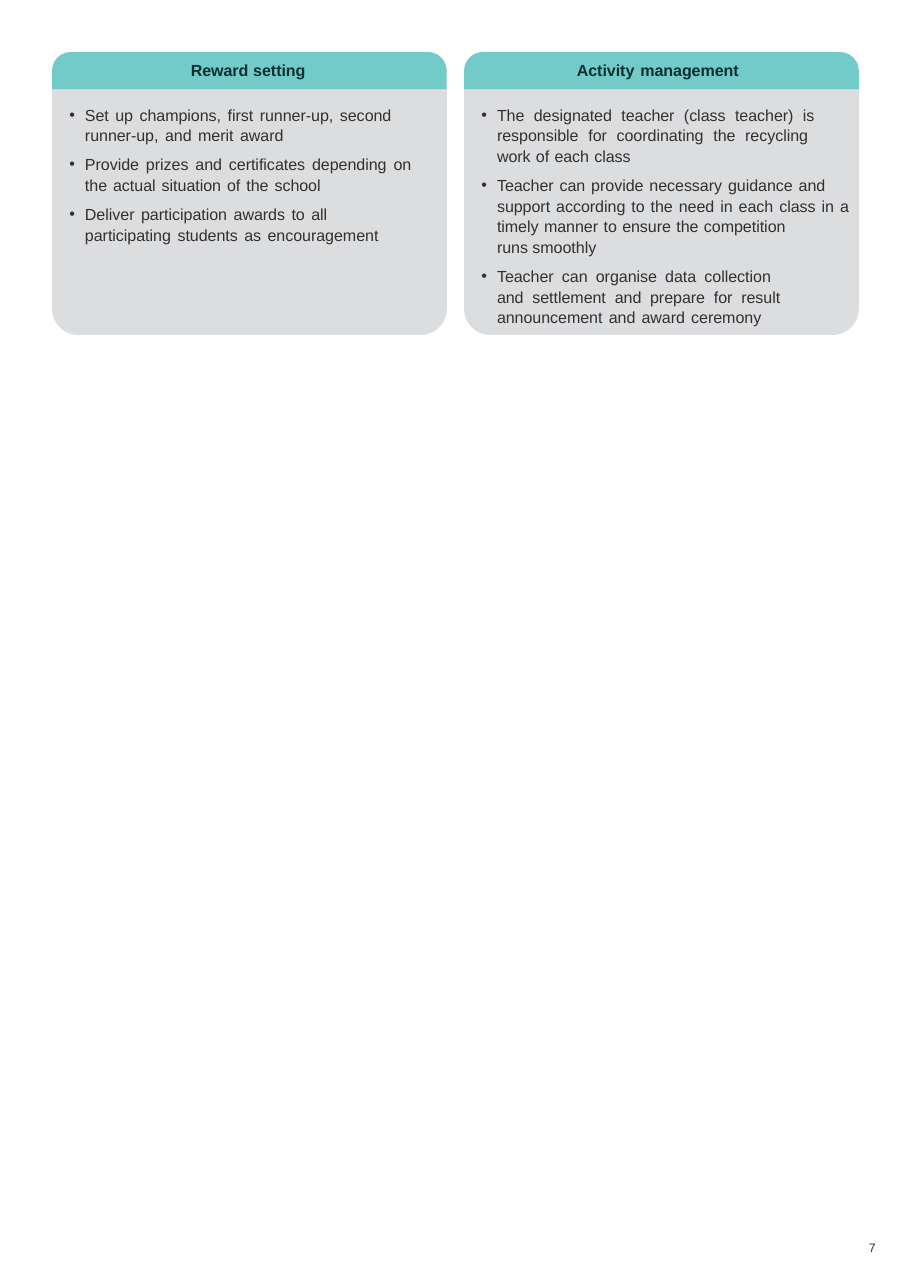
from lxml.etree import SubElement
from pptx import Presentation
from pptx.dml.color import RGBColor
from pptx.enum.shapes import MSO_SHAPE
from pptx.oxml.ns import qn
from pptx.util import Cm, Pt

TEAL = RGBColor(0x72, 0xCB, 0xC9)
GREY = RGBColor(0xDC, 0xDD, 0xDE)
DARK_TEAL = RGBColor(0x00, 0x2F, 0x2F)
CHARCOAL = RGBColor(0x32, 0x30, 0x31)

CARD_LEFT, CARD_TOP, CARD_PITCH, CARD_WIDTH = 1.2, 1.2, 9.5, 9.1
HEADER_HEIGHT, BODY_HEIGHT = 0.86, 5.66
BULLET_INDENT = 0.38

# Each line of text is paired with the extra width of its word gaps, in points.
CARDS = [
    {
        "title": ("Reward setting", 0.2),
        "title_offset": 3.2,
        "items": [
            [("Set up champions, first runner-up, second", 1.3),
             ("runner-up, and merit award", 1.3)],
            [("Provide prizes and certificates depending on", 1.6),
             ("the actual situation of the school", 1)],
            [("Deliver participation awards to all", 1.3),
             ("participating students as encouragement", 1.3)],
        ],
    },
    {
        "title": ("Activity management", 0.9),
        "title_offset": 2.6,
        "items": [
            [("The designated teacher (class teacher) is", 3.2),
             ("responsible for coordinating the recycling", 3.4),
             ("work of each class", 0.5)],
            [("Teacher can provide necessary guidance and", 0.9),
             ("support according to the need in each class in a", 1),
             ("timely manner to ensure the competition", 0.6),
             ("runs smoothly", 0)],
            [("Teacher can organise data collection", 2.4),
             ("and settlement and prepare for result", 2.8),
             ("announcement and award ceremony", 1.1)],
        ],
    },
]


class Page:
    """Holds the text style and the slide being drawn."""

    font_name = "Arial"
    line_spacing = 1.07
    item_gap = Pt(5.6)

    def __init__(self, slide):
        self.slide = slide

    def panel(self, left, top, height, radius, color, rotation=0):
        """Draw a card part with two rounded corners, on top unless rotated."""
        shape = self.slide.shapes.add_shape(
            MSO_SHAPE.ROUND_2_SAME_RECTANGLE,
            Cm(left), Cm(top), Cm(CARD_WIDTH), Cm(height))
        shape.adjustments[0] = radius / height
        shape.rotation = rotation
        shape.shadow.inherit = False
        shape.fill.solid()
        shape.fill.fore_color.rgb = color
        shape.line.fill.background()

    def text_frame(self, left, top, width, height):
        frame = self.slide.shapes.add_textbox(
            Cm(left), Cm(top), Cm(width), Cm(height)).text_frame
        frame.word_wrap = True
        frame.margin_left = frame.margin_right = frame.margin_bottom = 0
        frame.margin_top = Cm(0.03)
        return frame

    def add_run(self, paragraph, text, size, color, bold, spacing=0):
        run = paragraph.add_run()
        run.text = text
        run.font.name = self.font_name
        run.font.size = Pt(size)
        run.font.bold = bold
        run.font.color.rgb = color
        if spacing:
            run.font._element.set("spc", str(round(spacing * 100)))

    def add_line(self, paragraph, text, gap=0, size=10.5, color=CHARCOAL, bold=False):
        """Write one line, widening the space between words by gap points."""
        for index, word in enumerate(text.split()):
            if index:
                self.add_run(paragraph, " ", size, color, bold, gap)
            self.add_run(paragraph, word, size, color, bold)

    def title(self, left, top, text, gap):
        frame = self.text_frame(left, top, 4.2, 0.48)
        paragraph = frame.paragraphs[0]
        paragraph.space_before = Pt(1)
        self.add_line(paragraph, text, gap, color=DARK_TEAL, bold=True)

    def bullet_list(self, left, top, items):
        frame = self.text_frame(left, top, 8.74, 5.05)
        for index, lines in enumerate(items):
            paragraph = frame.add_paragraph() if index else frame.paragraphs[0]
            paragraph.line_spacing = self.line_spacing
            paragraph.space_before = self.item_gap if index else Pt(0.6)
            properties = paragraph._p.get_or_add_pPr()
            properties.set("marL", str(Cm(BULLET_INDENT)))
            properties.set("indent", str(-Cm(BULLET_INDENT - 0.02)))
            SubElement(properties, qn("a:buFont"), typeface=self.font_name)
            SubElement(properties, qn("a:buChar"), char="•")
            for number, (text, gap) in enumerate(lines):
                if number:
                    paragraph.add_line_break()
                self.add_line(paragraph, text, gap)

    def card(self, left, title, title_offset, items):
        body_top = CARD_TOP + HEADER_HEIGHT
        self.panel(left, body_top, BODY_HEIGHT, 0.6, GREY, rotation=180)
        self.panel(left, CARD_TOP, HEADER_HEIGHT, 0.43, TEAL)
        self.title(left + title_offset, CARD_TOP + 0.17, *title)
        self.bullet_list(left + 0.38, body_top + 0.3, items)

    def page_number(self, text):
        frame = self.text_frame(20.03, 28.55, 0.5, 0.36)
        self.add_line(frame.paragraphs[0], text, size=8)


def main():
    presentation = Presentation()
    presentation.slide_width = Cm(20.98)
    presentation.slide_height = Cm(29.69)
    page = Page(presentation.slides.add_slide(presentation.slide_layouts[6]))
    for index, card in enumerate(CARDS):
        page.card(CARD_LEFT + index * CARD_PITCH, **card)
    page.page_number("7")
    presentation.save("out.pptx")


if __name__ == "__main__":
    main()
